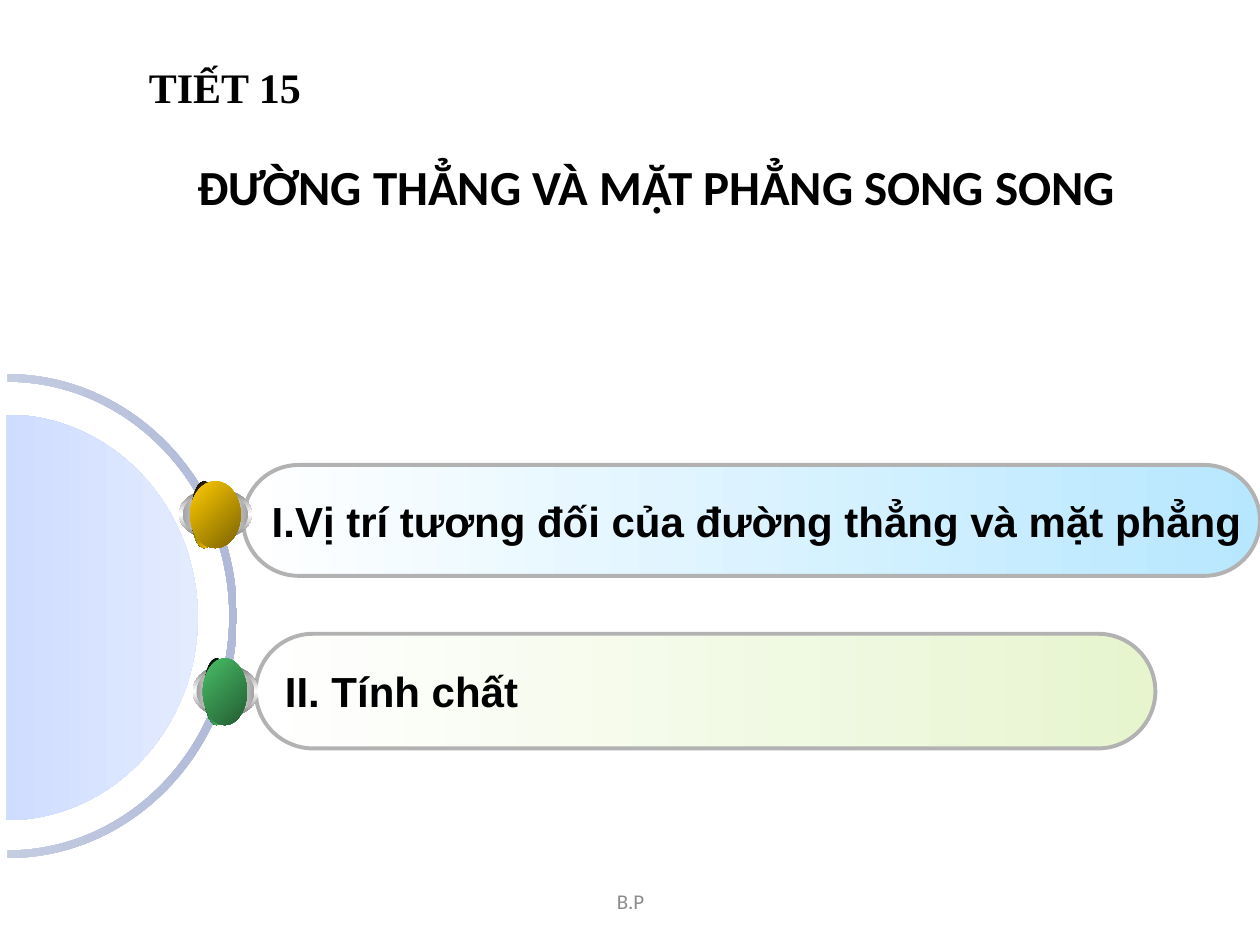
from lxml import etree
from pptx import Presentation
from pptx.dml.color import RGBColor
from pptx.enum import shapes, text
from pptx.oxml import ns
from pptx.util import Inches, Pt

COLORS = {
    "ink": "000000", "footer": "8C8C8C", "edge": "B2B2B2", "white": "FFFFFF",
    "sky": "B7E7FF", "lime": "E7F5CF",
    "ring_light": "DBE0ED", "ring_dark": "B0BAD8",
    "disc_dark": "B8CCFE", "disc_light": "E3EBFF",
    "rim": "767676", "bezel": "A2A2A2",
    "gold": "FFCC00", "gold_dark": "7C6300",
    "green": "48BE67", "green_dark": "235C32",
}
BEZIER = 0.55  # control length of a quarter ellipse


def paint(shape, names, angle=0):
    """Fill with evenly spaced gradient stops; the angle runs clockwise."""
    shape.shadow.inherit = False
    shape.line.fill.background()
    shape.fill.gradient()
    gradient = shape._element.spPr.find(ns.qn("a:gradFill"))
    stops = gradient.find(ns.qn("a:gsLst"))
    for stop in list(stops):
        stops.remove(stop)
    for i, name in enumerate(names):
        stop = etree.SubElement(stops, ns.qn("a:gs"),
                                pos=str(100000 * i // (len(names) - 1)))
        etree.SubElement(stop, ns.qn("a:srgbClr"), val=COLORS[name])
    shape.fill.gradient_angle = -angle % 360


def write(frame, words, size, font, color="ink", bold=True,
          align=text.PP_ALIGN.CENTER, anchor=text.MSO_ANCHOR.MIDDLE, wrap=True):
    frame.word_wrap = wrap
    frame.vertical_anchor = anchor
    paragraph = frame.paragraphs[0]
    paragraph.alignment = align
    run = paragraph.add_run()
    run.text = words
    run.font.size, run.font.name, run.font.bold = Pt(size), font, bold
    run.font.color.rgb = RGBColor.from_string(COLORS[color])
    return paragraph


def half_ellipse(rx, ry):
    """Bezier points down the right half of an ellipse about the origin."""
    kx, ky = rx * BEZIER, ry * BEZIER
    return [(0, -ry), (kx, -ry), (rx, -ky), (rx, 0), (rx, ky), (kx, ry), (0, ry)]


def add_curve(slide, cx, cy, rx, ry, arcs, names):
    """Join the arcs into one closed outline in the box of the whole ellipse."""
    left, top, right, bottom = (Inches(v) for v in (cx - rx, cy - ry, cx + rx, cy + ry))
    builder = slide.shapes.build_freeform(left, top)
    builder.add_line_segments([(right, top), (right, bottom), (left, bottom)])
    curve = builder.convert_to_shape()
    outline = curve._element.spPr.find(".//" + ns.qn("a:path"))
    for segment in list(outline):
        outline.remove(segment)

    def draw(tag, points=()):
        step = etree.SubElement(outline, ns.qn("a:" + tag))
        for x, y in points:
            etree.SubElement(step, ns.qn("a:pt"), x=str(Inches(rx + x)),
                             y=str(Inches(ry + y)))

    for i, arc in enumerate(arcs):
        draw("lnTo" if i else "moveTo", arc[:1])
        draw("cubicBezTo", arc[1:4])
        draw("cubicBezTo", arc[4:])
    draw("close")
    paint(curve, names)


def add_header(slide, left, top, width, height):
    title = slide.shapes.title
    title.left, title.top = Inches(left), Inches(top)
    title.width, title.height = Inches(width), Inches(height)
    write(title.text_frame, "ĐƯỜNG THẲNG VÀ MẶT PHẲNG SONG SONG", 28, "Calibri",
          anchor=text.MSO_ANCHOR.BOTTOM)
    lesson = slide.shapes.add_textbox(Inches(left - 0.35), Inches(top + 0.23),
                                      Inches(3.11), Inches(0.55))
    paragraph = write(lesson.text_frame, "TIẾT 15", 24, "Times New Roman",
                      anchor=text.MSO_ANCHOR.TOP)
    paragraph.space_before = Pt(5)


def add_dial(slide, left, middle):
    # Thin outer ring, then the solid half disc
    ring = [half_ellipse(1.82, 1.92), half_ellipse(1.76, 1.86)[::-1]]
    add_curve(slide, left, middle, 1.82, 1.92, ring, ["ring_light", "ring_dark"])
    add_curve(slide, left - 0.01, middle + 0.01, 1.52, 1.61,
              [half_ellipse(1.52, 1.61)], ["disc_dark", "disc_light"])


def add_topic(slide, left, top, width, height, words, tint):
    pill = slide.shapes.add_shape(shapes.MSO_SHAPE.ROUNDED_RECTANGLE, Inches(left),
                                  Inches(top), Inches(width), Inches(height))
    pill.adjustments[0] = 0.5
    paint(pill, ["white", tint])
    pill.line.color.rgb = RGBColor.from_string(COLORS["edge"])
    pill.line.width = Pt(2.25)
    write(pill.text_frame, words, 24, "Arial", align=text.PP_ALIGN.LEFT, wrap=False)


def add_knob(slide, left, top, width, height, ball_left, ball_width, hue):
    group = slide.shapes.add_group_shape()
    ball_top, ball_height = top + height / 2 - 0.26, 0.53
    layers = [
        (left, top, width, height, ["rim", "white", "rim"], 90),
        (left + 0.03, top + 0.03, width - 0.06, height - 0.05,
         ["bezel", "white", "bezel"], 0),
        (ball_left + 0.01, ball_top, 0.2, ball_height, ["ink", hue], 45),
        (ball_left, ball_top, ball_width, ball_height, [hue, hue + "_dark"], 45),
    ]
    for x, y, w, h, names, angle in layers:
        oval = group.shapes.add_shape(shapes.MSO_SHAPE.OVAL, Inches(x), Inches(y),
                                      Inches(w), Inches(h))
        paint(oval, names, angle)


def add_footer(slide, left, top, width, height):
    footer = slide.shapes.add_textbox(Inches(left), Inches(top),
                                      Inches(width), Inches(height))
    write(footer.text_frame, "B.P", 12, "Calibri", "footer", bold=False)


def main():
    prs = Presentation()
    prs.slide_width, prs.slide_height = Inches(10), Inches(7.5)
    slide = prs.slides.add_slide(prs.slide_layouts[0])
    subtitle = slide.placeholders[1]._element
    subtitle.getparent().remove(subtitle)

    add_footer(slide, 3.42, 6.95, 3.17, 0.4)
    add_header(slide, 0.58, 0.21, 9.25, 1.55)

    # First topic, with the dial over its pill
    add_topic(slide, 1.93, 3.69, 8.07, 0.88,
              "I.Vị trí tương đối của đường thẳng và mặt phẳng", "sky")
    add_dial(slide, 0.06, 4.89)
    add_knob(slide, 1.42, 3.88, 0.58, 0.4, 1.51, 0.4, "gold")

    # Second topic
    add_topic(slide, 2.03, 5.03, 7.14, 0.91, "II. Tính chất", "lime")
    add_knob(slide, 1.53, 5.28, 0.52, 0.41, 1.61, 0.35, "green")

    prs.save("out.pptx")


if __name__ == "__main__":
    main()
